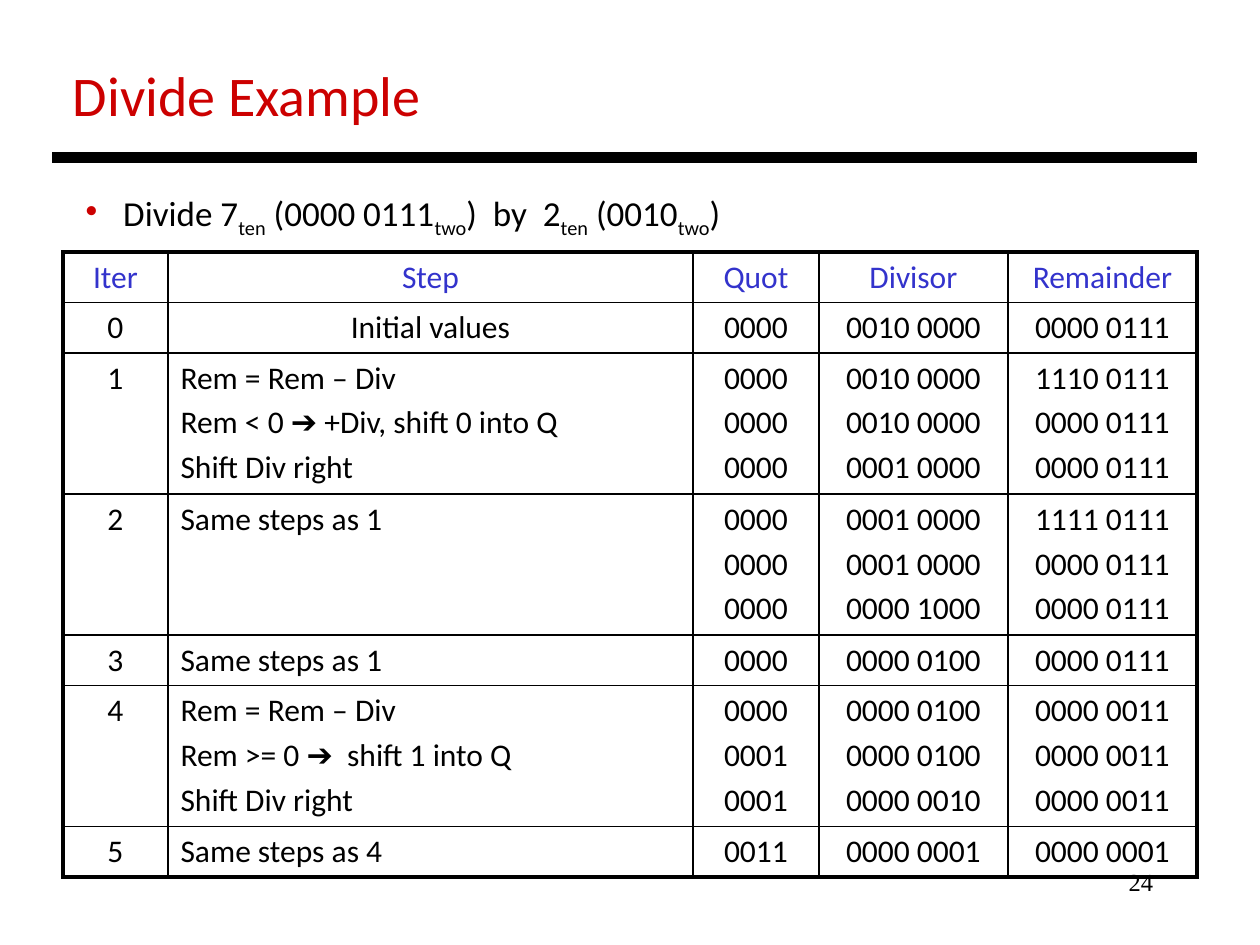
from collections import namedtuple
from dataclasses import dataclass

from lxml import etree
from pptx import Presentation
from pptx.dml.color import RGBColor
from pptx.enum import shapes, text
from pptx.oxml import ns
from pptx.util import Pt

Box = namedtuple("Box", "left top width height")


@dataclass(frozen=True)
class Theme:
    ink: str = "000000"
    accent: str = "CC0000"
    heading: str = "3333CC"
    body_font: str = "Calibri"
    number_font: str = "Times New Roman"
    title_size: float = 32
    lead_size: float = 20
    cell_size: float = 18
    number_size: float = 14
    paragraph_gap: float = 3.6
    rule_width: float = 6
    outer_border: float = 2.25
    inner_border: float = 1


THEME = Theme()
LEFT, CENTER, RIGHT = text.PP_ALIGN.LEFT, text.PP_ALIGN.CENTER, text.PP_ALIGN.RIGHT

LEAD = [
    (" Divide 7", "ten"),
    (" (0000 0111", "two"),
    (")  by  2", "ten"),
    (" (0010", "two"),
    (")", ""),
]
COLUMN_WIDTHS = [60, 300, 72, 108, 108]
SINGLE_ROW, TRIPLE_ROW = 28.8, 80.64
DIVISION_STEPS = [
    ("Iter", "Step", "Quot", "Divisor", "Remainder"),
    ("0", "Initial values", "0000", "0010 0000", "0000 0111"),
    ("1", "Rem = Rem – Div\nRem < 0 ➔ +Div, shift 0 into Q\nShift Div right",
     "0000\n0000\n0000", "0010 0000\n0010 0000\n0001 0000",
     "1110 0111\n0000 0111\n0000 0111"),
    ("2", "Same steps as 1", "0000\n0000\n0000",
     "0001 0000\n0001 0000\n0000 1000", "1111 0111\n0000 0111\n0000 0111"),
    ("3", "Same steps as 1", "0000", "0000 0100", "0000 0111"),
    ("4", "Rem = Rem – Div\nRem >= 0 ➔  shift 1 into Q\nShift Div right",
     "0000\n0001\n0001", "0000 0100\n0000 0100\n0000 0010",
     "0000 0011\n0000 0011\n0000 0011"),
    ("5", "Same steps as 4", "0011", "0000 0001", "0000 0001"),
]


def add_run(paragraph, wording, size, color=THEME.ink, font=THEME.body_font):
    run = paragraph.add_run()
    run.text = wording
    for name, value in {"name": font, "size": Pt(size)}.items():
        setattr(run.font, name, value)
    run.font.color.rgb = RGBColor.from_string(color)
    return run


def add_text_frame(slide, box):
    frame = slide.shapes.add_textbox(*map(Pt, box)).text_frame
    frame.word_wrap = True
    return frame


def add_color(parent, color):
    etree.SubElement(parent, ns.qn("a:srgbClr"), val=color)


def add_title(slide, box):
    paragraph = add_text_frame(slide, box).paragraphs[0]
    add_run(paragraph, "Divide Example", THEME.title_size, THEME.accent)


def add_rule(slide, box):
    rule = slide.shapes.add_connector(
        shapes.MSO_CONNECTOR.STRAIGHT, Pt(box.left), Pt(box.top),
        Pt(box.left + box.width), Pt(box.top + box.height))
    rule.line.width = Pt(THEME.rule_width)
    rule.line.color.rgb = RGBColor.from_string(THEME.ink)
    etree.SubElement(rule._element.spPr, ns.qn("a:effectLst"))


def add_lead(slide, box):
    paragraph = add_text_frame(slide, box).paragraphs[0]
    properties = paragraph._p.get_or_add_pPr()
    for name, value in {"marL": Pt(17), "indent": Pt(-17)}.items():
        properties.set(name, str(value))
    add_color(etree.SubElement(properties, ns.qn("a:buClr")), THEME.accent)
    etree.SubElement(properties, ns.qn("a:buChar"), char="•")
    for wording, base in LEAD:
        add_run(paragraph, wording, THEME.lead_size)
        if base:
            subscript = add_run(paragraph, base, THEME.lead_size)
            subscript._r.get_or_add_rPr().set("baseline", "-25000")


def add_borders(cell, outer_sides):
    properties = cell._tc.get_or_add_tcPr()
    for side, is_outer in outer_sides.items():
        width = THEME.outer_border if is_outer else THEME.inner_border
        border = etree.SubElement(properties, ns.qn(f"a:ln{side}"), w=str(Pt(width)))
        add_color(etree.SubElement(border, ns.qn("a:solidFill")), THEME.ink)


def fill_cell(cell, wording, align, color):
    frame = cell.text_frame
    for index, line in enumerate(wording.split("\n")):
        paragraph = frame.add_paragraph() if index else frame.paragraphs[0]
        layout = {"alignment": align, "space_before": Pt(THEME.paragraph_gap)}
        for name, value in layout.items():
            setattr(paragraph, name, value)
        add_run(paragraph, line, THEME.cell_size, color)


def add_division_table(slide, box):
    last_row, last_column = len(DIVISION_STEPS) - 1, len(COLUMN_WIDTHS) - 1
    table = slide.shapes.add_table(
        last_row + 1, last_column + 1, *map(Pt, box)).table
    for name, value in {"first_row": False, "horz_banding": False}.items():
        setattr(table, name, value)
    for column, width in zip(table.columns, COLUMN_WIDTHS):
        column.width = Pt(width)
    for r, step in enumerate(DIVISION_STEPS):
        is_triple = any("\n" in wording for wording in step)
        table.rows[r].height = Pt(TRIPLE_ROW if is_triple else SINGLE_ROW)
        for c, wording in enumerate(step):
            cell = table.cell(r, c)
            align = LEFT if c == 1 and r > 1 else CENTER
            fill_cell(cell, wording, align, THEME.ink if r else THEME.heading)
            add_borders(cell, {"L": c == 0, "R": c == last_column,
                               "T": r == 0, "B": r == last_row})
            cell.fill.background()


def add_slide_number(slide, box):
    paragraph = add_text_frame(slide, box).paragraphs[0]
    paragraph.alignment = RIGHT
    add_run(paragraph, "24", THEME.number_size, font=THEME.number_font)


def main():
    deck = Presentation()
    deck.slide_width, deck.slide_height = Pt(720), Pt(540)
    slide = deck.slides.add_slide(deck.slide_layouts[6])
    add_slide_number(slide, Box(516, 492, 150, 36))
    add_title(slide, Box(34.6, 31, 215.3, 46))
    add_rule(slide, Box(30, 90, 654, 0))
    add_lead(slide, Box(41.8, 105.8, 383, 31.7))
    add_division_table(slide, Box(36, 144, 648, 357))
    deck.save("out.pptx")


if __name__ == "__main__":
    main()
